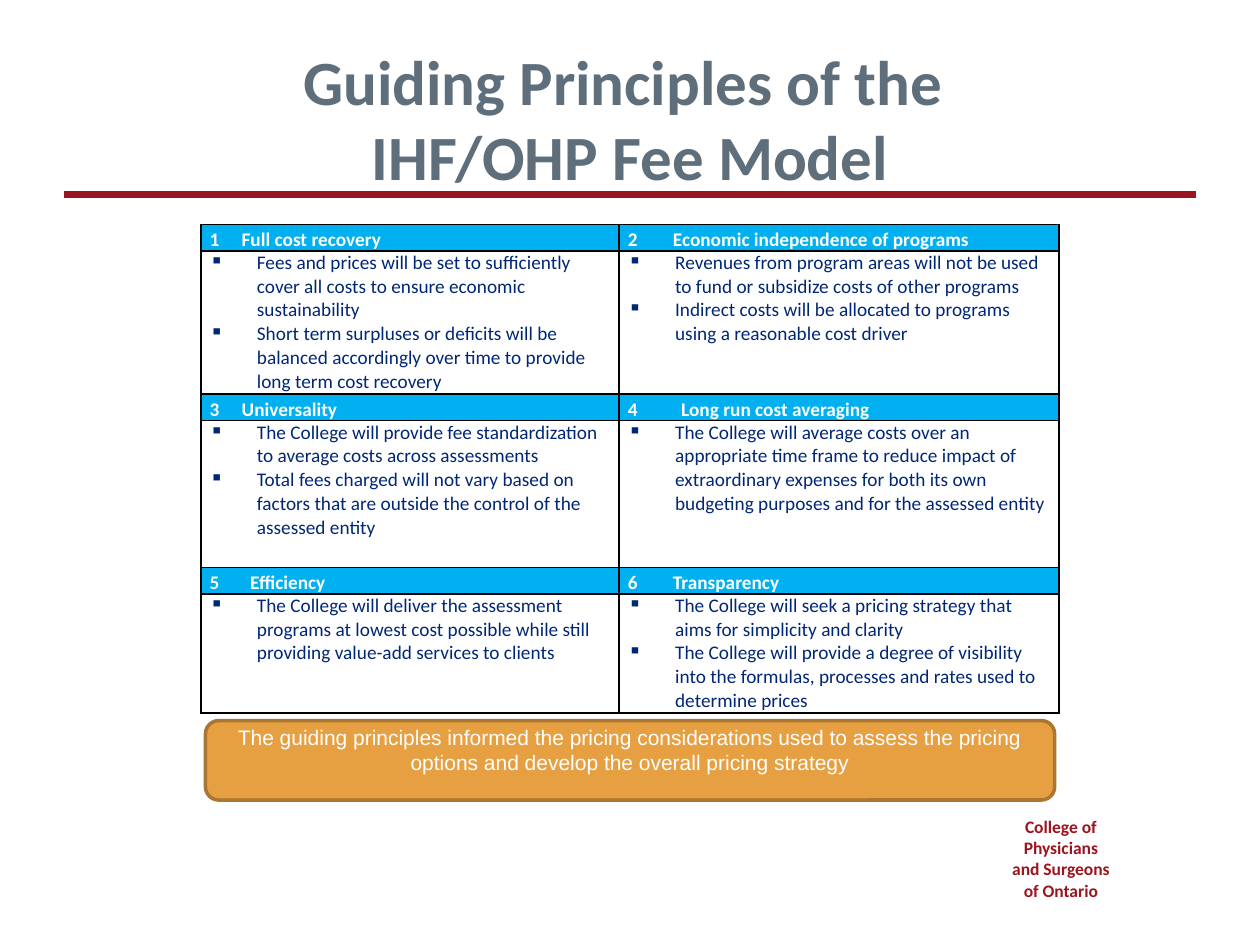
from copy import deepcopy

from pptx import Presentation
from pptx.dml.color import RGBColor
from pptx.enum.shapes import MSO_CONNECTOR, MSO_SHAPE
from pptx.enum.text import MSO_ANCHOR, MSO_AUTO_SIZE, PP_ALIGN
from pptx.oxml.ns import qn
from pptx.util import Pt
from lxml import etree

CENTER, LEFT = PP_ALIGN.CENTER, PP_ALIGN.LEFT
TOP, BOTTOM = MSO_ANCHOR.TOP, MSO_ANCHOR.BOTTOM
NO_FIT = MSO_AUTO_SIZE.NONE
STRAIGHT = MSO_CONNECTOR.STRAIGHT
ROUNDED = MSO_SHAPE.ROUNDED_RECTANGLE

RED, SLATE, BLUE, NAVY = "9B151F", "5E6E7B", "00B0F0", "002776"
WHITE, BLACK, ORANGE, BROWN = "FFFFFF", "000000", "E6A042", "AA7631"
COL_WIDTHS = [239, 251.3]
HEAD_HEIGHT = 15.2
BODY_HEIGHTS = [81.8, 83.8, 68]
INDENT = 27

# Each principle: heading, tab position of its name, bullets
PRINCIPLES = [
    ("Full cost recovery", 18.3, [
        "Fees and prices will be set to sufficiently cover all costs to ensure economic sustainability",
        "Short term surpluses or deficits will be balanced accordingly over time to provide long term cost recovery"]),
    ("Economic independence of programs", 25.7, [
        "Revenues from program areas will not be used to fund or subsidize costs of other programs",
        "Indirect costs will be allocated to programs using a reasonable cost driver"]),
    ("Universality", 18.3, [
        "The College will provide fee standardization to average costs across assessments",
        "Total fees charged will not vary based on factors that are outside the control of the assessed entity"]),
    ("Long run cost averaging", 30.5, [
        "The College will average costs over an appropriate time frame to reduce impact of extraordinary "
        "expenses for both its own budgeting purposes and for the assessed entity"]),
    ("Efficiency", 23.2, [
        "The College will deliver the assessment programs at lowest cost possible while still providing "
        "value-add services to clients"]),
    ("Transparency", 25.7, [
        "The College will seek a pricing strategy that aims for simplicity and clarity",
        "The College will provide a degree of visibility into the formulas, processes and rates used to "
        "determine prices"]),
]


def rgb(color):
    """Return the colour for a hex string."""
    return RGBColor.from_string(color)


def write(p, text, size=11, color=NAVY, bold=False, font="Calibri", align=LEFT, spacing=None):
    """Put formatted text in a paragraph."""
    p.text = text
    p.alignment = align
    if spacing:
        p.line_spacing = spacing
    for r in p.runs:
        r.font.size, r.font.name, r.font.bold = Pt(size), font, bold
        r.font.color.rgb = rgb(color)
    for br in p._p.findall(qn("a:br")):
        br.append(deepcopy(p.runs[0]._r.rPr))


def add_tab(p, position):
    """Give a paragraph one left tab stop."""
    tabs = etree.SubElement(p._p.get_or_add_pPr(), qn("a:tabLst"))
    etree.SubElement(tabs, qn("a:tab"), pos=str(Pt(position)), algn="l")


def add_bullet(p):
    """Give a paragraph a square bullet with a hanging indent."""
    pPr = p._p.get_or_add_pPr()
    pPr.set("marL", str(Pt(INDENT)))
    pPr.set("indent", str(-Pt(INDENT)))
    etree.SubElement(pPr, qn("a:buChar"), char="▪")


def style_cell(cell, fill):
    """Set the borders, fill and margins of a table cell."""
    tcPr = cell._tc.get_or_add_tcPr()
    for side in ("lnL", "lnR", "lnT", "lnB"):
        ln = etree.SubElement(tcPr, qn("a:" + side), w=str(Pt(1)))
        paint = etree.SubElement(ln, qn("a:solidFill"))
        etree.SubElement(paint, qn("a:srgbClr"), val=BLACK)
    cell.fill.solid()
    cell.fill.fore_color.rgb = rgb(fill)
    cell.margin_left = cell.margin_right = Pt(5)
    cell.margin_top = cell.margin_bottom = Pt(0)


def add_title(s, text):
    """Fill and place the title placeholder."""
    sp = s.shapes.title
    sp.left, sp.top, sp.width, sp.height = Pt(36), Pt(21.6), Pt(648), Pt(90)
    tf = sp.text_frame
    tf.auto_size, tf.vertical_anchor, tf.margin_bottom = NO_FIT, BOTTOM, Pt(1)
    write(tf.paragraphs[0], text, size=36, color=SLATE, bold=True, align=CENTER)


def add_rule(s):
    """Draw the red rule under the title."""
    line = s.shapes.add_connector(STRAIGHT, Pt(36.8), Pt(111.4), Pt(683.2), Pt(111.4))
    line.line.color.rgb, line.line.width = rgb(RED), Pt(4)
    etree.SubElement(line._element.spPr, qn("a:effectLst"))


def add_principles(s):
    """Draw the table with a heading row and a bullet row for each pair."""
    heights = [h for body in BODY_HEIGHTS for h in (HEAD_HEIGHT, body)]
    table = s.shapes.add_table(len(heights), 2, Pt(114.8), Pt(128.2),
                               Pt(sum(COL_WIDTHS)), Pt(sum(heights))).table
    table.first_row = table.horz_banding = False
    for col, width in zip(table.columns, COL_WIDTHS):
        col.width = Pt(width)
    for row, height in zip(table.rows, heights):
        row.height = Pt(height)
    for i, (name, tab, bullets) in enumerate(PRINCIPLES):
        row, col = i // 2 * 2, i % 2
        head, body = table.cell(row, col), table.cell(row + 1, col)
        style_cell(head, BLUE)
        style_cell(body, WHITE)
        p = head.text_frame.paragraphs[0]
        add_tab(p, tab)
        write(p, f"{i + 1}\t{name}", color=WHITE, bold=True, spacing=1.15)
        tf = body.text_frame
        for j, text in enumerate(bullets):
            p = tf.add_paragraph() if j else tf.paragraphs[0]
            add_bullet(p)
            write(p, text)


def add_banner(s, text):
    """Draw the rounded box below the table."""
    sp = s.shapes.add_shape(ROUNDED, Pt(117.4), Pt(411.8), Pt(485.3), Pt(45.4))
    sp.shadow.inherit = False
    sp.fill.solid()
    sp.fill.fore_color.rgb = rgb(ORANGE)
    sp.line.color.rgb, sp.line.width = rgb(BROWN), Pt(2)
    tf = sp.text_frame
    tf.word_wrap, tf.vertical_anchor, tf.margin_top = True, TOP, Pt(0)
    write(tf.paragraphs[0], text, size=12, color=WHITE, font="Arial", align=CENTER)


def add_signature(s, text):
    """Add the name of the organisation at the lower right."""
    tf = s.shapes.add_textbox(Pt(569.5), Pt(463), Pt(73.4), Pt(55.4)).text_frame
    tf.word_wrap = True
    write(tf.paragraphs[0], text, size=10, color=RED, bold=True, align=CENTER)


def main():
    """Build and save the slide."""
    prs = Presentation()
    prs.slide_width, prs.slide_height = Pt(720), Pt(540)
    s = prs.slides.add_slide(prs.slide_layouts[5])
    add_rule(s)
    add_signature(s, "College of Physicians and Surgeons of Ontario")
    add_title(s, "Guiding Principles of the \vIHF/OHP Fee Model")
    add_principles(s)
    add_banner(s, "The guiding principles informed the pricing considerations used to assess "
                  "the pricing options and develop the overall pricing strategy")
    prs.save("out.pptx")


if __name__ == "__main__":
    main()
